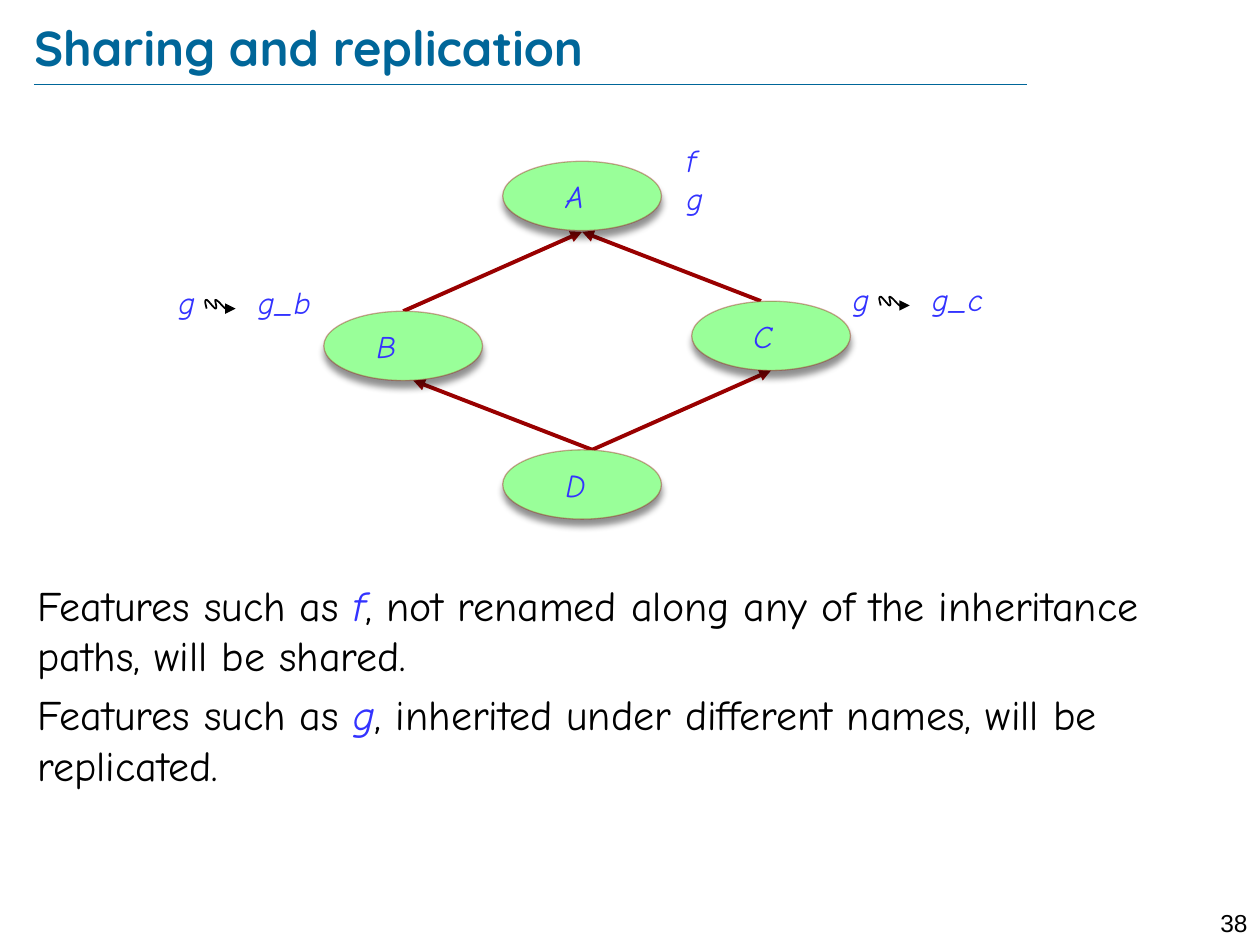
"""Build the slide on sharing and replication of inherited features."""
from lxml.etree import SubElement
from pptx import Presentation
from pptx.dml.color import RGBColor
from pptx.enum.shapes import MSO_CONNECTOR, MSO_SHAPE
from pptx.enum.text import MSO_ANCHOR, PP_ALIGN
from pptx.oxml.ns import qn
from pptx.util import Inches, Pt

rgb = RGBColor.from_string
BLUE, BLACK, RED, GREEN, TEAL = "3333FF", "000000", "990000", "99FF99", "006699"
LABEL = {"name": "Comic Neue", "size": Pt(18), "italic": True}
BODY = {"name": "Comic Neue", "size": Pt(24), "italic": False}
TITLE = {"name": "Quicksand", "size": Pt(28), "bold": True}
NUMBER = {"name": "Arial", "size": Pt(14)}

deck = Presentation()
deck.slide_width, deck.slide_height = Inches(10), Inches(7.5)
slide = deck.slides.add_slide(deck.slide_layouts[6])


def write(box, paragraphs, font, colour, gap=0, tab=None):
    frame = slide.shapes.add_textbox(*map(Inches, box)).text_frame
    frame.word_wrap = True
    for index, pieces in enumerate(paragraphs):
        paragraph = frame.paragraphs[0] if index == 0 else frame.add_paragraph()
        if index:
            paragraph.space_before = Pt(gap)
        if tab:
            stops = SubElement(paragraph._p.get_or_add_pPr(), qn("a:tabLst"))
            SubElement(stops, qn("a:tab"), pos=str(Inches(tab)), algn="l")
        for position, piece in enumerate(pieces):
            run = paragraph.add_run()
            run.text = piece
            for key, value in font.items():
                setattr(run.font, key, value)
            feature = position % 2 == 1
            if feature:
                run.font.italic = True
            run.font.color.rgb = rgb(BLUE if feature else colour)
    return frame


def draw_line(line, colour, width, arrow=True):
    line.line.color.rgb = rgb(colour)
    line.line.width = Pt(width)
    if arrow:
        SubElement(line.line._get_or_add_ln(), qn("a:tailEnd"), type="triangle")
    SubElement(line._element.spPr, qn("a:effectLst"))


rule = slide.shapes.add_connector(
    MSO_CONNECTOR.STRAIGHT, Inches(0.27), Inches(0.67), Inches(8.15), Inches(0.67))
draw_line(rule, TEAL, 0.25, arrow=False)

number = write((9.45, 7.16, 0.55, 0.24), [["38"]], NUMBER, BLACK)
number.paragraphs[0].alignment = PP_ALIGN.RIGHT

inheritance = [
    (3.2, 2.47, 4.62, 1.84),
    (6.04, 2.39, 4.62, 1.84),
    (4.7, 3.57, 6.12, 2.94),
    (4.7, 3.57, 3.28, 3.02),
]
for ends in inheritance:
    link = slide.shapes.add_connector(MSO_CONNECTOR.STRAIGHT, *map(Inches, ends))
    draw_line(link, RED, 2.25)

heading = write((0.27, 0.13, 8.69, 0.48), [["Sharing and replication"]], TITLE, TEAL)
frame_format = {"margin_left": 0, "margin_right": 0, "margin_top": 0,
                "margin_bottom": 0, "vertical_anchor": MSO_ANCHOR.MIDDLE}
for key, value in frame_format.items():
    setattr(heading, key, value)

write((0.2, 4.55, 9.53, 2.43), [
    ["Features such as ", "f",
     ", not renamed along any of the inheritance paths, will be shared."],
    ["Features such as ", "g", ", inherited under different names, will be replicated."],
], BODY, BLACK, gap=5)

classes = {"A": (3.99, 1.28, 0.4), "D": (3.99, 3.57, 0.4),
           "B": (2.57, 2.47, 0.32), "C": (5.49, 2.39, 0.39)}
for name, (left, top, indent) in classes.items():
    oval = slide.shapes.add_shape(
        MSO_SHAPE.OVAL, Inches(left), Inches(top), Inches(1.26), Inches(0.55))
    oval.fill.solid()
    oval.fill.fore_color.rgb = rgb(GREEN)
    oval.line.color.rgb = rgb(RED)
    oval.line.width = Pt(0.75)
    outline = oval.line._get_or_add_ln().find(".//" + qn("a:srgbClr"))
    SubElement(outline, qn("a:alpha"), val="34000")
    oval.shadow.inherit = False
    shadow = SubElement(
        oval._element.spPr.find(qn("a:effectLst")), qn("a:outerShdw"),
        blurRad=str(Pt(4)), dist=str(Pt(4)), dir="5400000", rotWithShape="0")
    shade = SubElement(shadow, qn("a:srgbClr"), val=BLACK)
    SubElement(shade, qn("a:alpha"), val="43000")
    write((left + indent, top + 0.08, 0.55, 0.4), [[name]], LABEL, BLUE)

write((5.35, 1.07, 1.65, 0.71), [["f"], ["g"]], LABEL, BLUE)

wave = [
    (0.32, 0.25), (0.31, 0.21), (0.3, 0.18), (0.32, 0.18),
    (0.33, 0.18), (0.38, 0.25), (0.39, 0.25),
    (0.41, 0.25), (0.38, 0.18), (0.39, 0.18),
    (0.41, 0.18), (0.45, 0.24), (0.47, 0.25),
    (0.5, 0.27), (0.54, 0.25), (0.55, 0.25),
]
STEPS = 8
for new_name, left, top in [("g_b", 1.32, 2.2), ("g_c", 6.67, 2.175)]:
    write((left, top, 1.27, 0.4), [["g\t" + new_name]], LABEL, BLUE, tab=0.63)
    curve = []
    for start in range(0, len(wave) - 1, 3):
        for step in range(1, STEPS + 1):
            t = step / STEPS
            weights = ((1 - t) ** 3, 3 * t * (1 - t) ** 2, 3 * t * t * (1 - t), t ** 3)
            x, y = (sum(w * point[axis] for w, point in zip(weights, wave[start:start + 4]))
                    for axis in (0, 1))
            curve.append((Inches(left + x), Inches(top + y)))
    builder = slide.shapes.build_freeform(
        Inches(left + wave[0][0]), Inches(top + wave[0][1]))
    builder.add_line_segments(curve, close=False)
    squiggle = builder.convert_to_shape()
    squiggle.fill.background()
    draw_line(squiggle, BLACK, 1)

deck.save("out.pptx")
